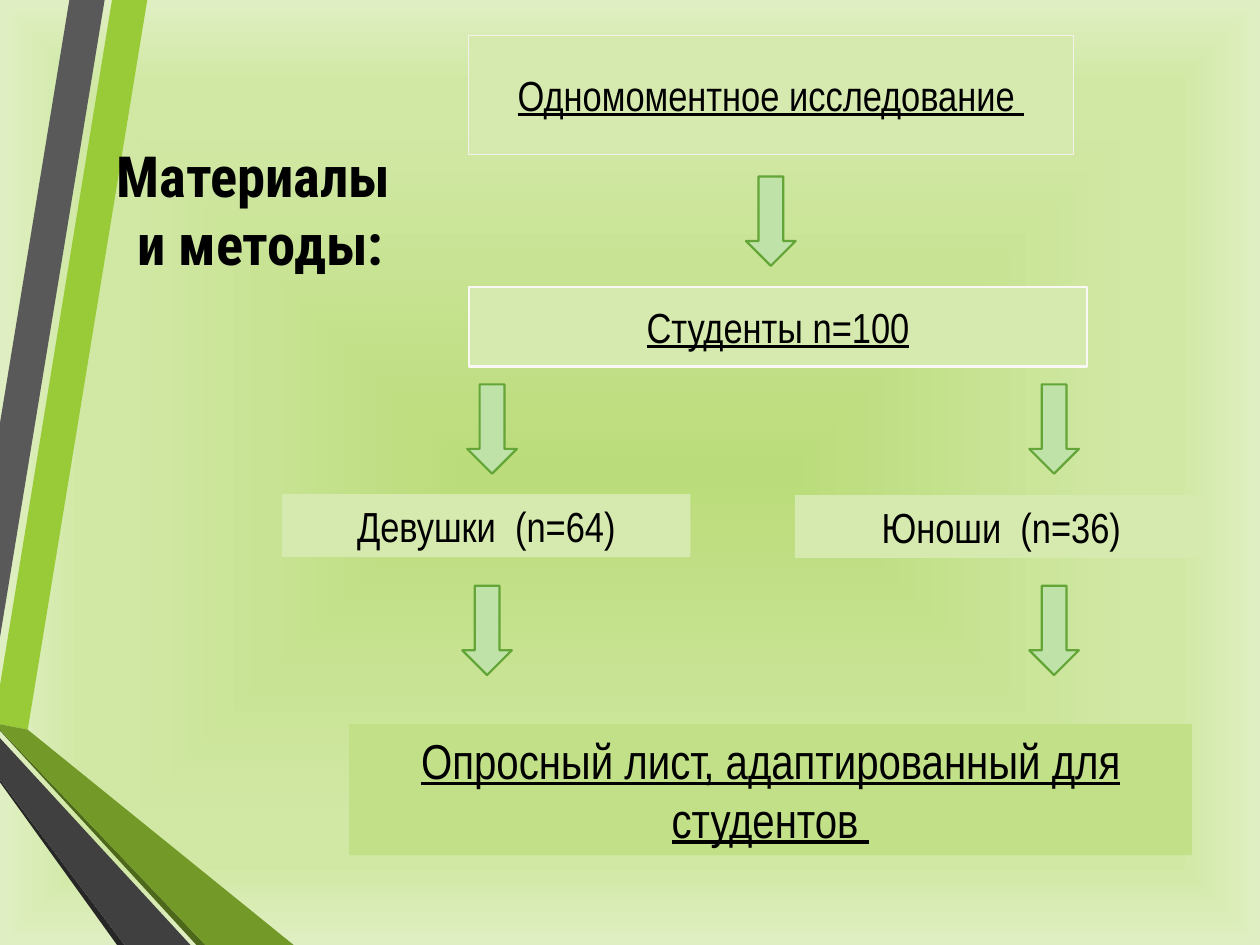
"""Build the "Materials and methods" study-design slide."""
from pptx import Presentation
from pptx.dml.color import RGBColor
from pptx.enum.shapes import MSO_SHAPE
from pptx.enum.text import MSO_ANCHOR, PP_ALIGN
from pptx.oxml import parse_xml
from pptx.oxml.ns import nsdecls
from pptx.util import Cm, Pt

BLACK = RGBColor(0x00, 0x00, 0x00)
PALE_GREEN = RGBColor(0xD6, 0xEA, 0xAF)
MID_GREEN = RGBColor(0xC2, 0xE0, 0x88)
ARROW_FILL = RGBColor(0xBF, 0xE2, 0xA8)
ARROW_LINE = RGBColor(0x63, 0xA5, 0x37)
CREAM = RGBColor(0xF3, 0xF1, 0xE9)
OFF_WHITE = RGBColor(0xF9, 0xF8, 0xF4)
LIME = RGBColor(0x99, 0xCB, 0x38)
GREY = RGBColor(0x59, 0x59, 0x59)
NEAR_BLACK = RGBColor(0x26, 0x26, 0x26)
DARK_OLIVE = RGBColor(0x4D, 0x67, 0x1B)
OLIVE = RGBColor(0x73, 0x9A, 0x28)
CHARCOAL = RGBColor(0x40, 0x40, 0x40)
GLOW = [
    (0, RGBColor(0xBB, 0xDC, 0x7A)),
    (74, RGBColor(0xD1, 0xE8, 0xA5)),
    (83, RGBColor(0xD1, 0xE8, 0xA5)),
    (100, RGBColor(0xE0, 0xEF, 0xC3)),
]

WIDTH, HEIGHT = 25.4, 19.05
RIBBONS = [
    (LIME, [(0, 13.82), (0, 14.6), (0.56, 14.71), (2.97, 0), (2.26, 0)]),
    (GREY, [(2.11, 0), (1.4, 0), (0, 8.53), (0, 12.85)]),
    (NEAR_BLACK, [(0, 15.72), (0, 15.77), (2.36, HEIGHT), (2.51, HEIGHT)]),
    (DARK_OLIVE, [(0, 14.71), (0, 14.73), (3.96, HEIGHT), (4.14, HEIGHT)]),
    (OLIVE, [(0, 14.71), (4.14, HEIGHT), (5.92, HEIGHT), (0.56, 14.71), (0, 14.6)]),
    (CHARCOAL, [(0, 15.72), (2.51, HEIGHT), (3.84, HEIGHT), (0, 14.88)]),
]
ARROWS = [(15.04, 3.56), (9.42, 7.75), (20.75, 7.75), (20.75, 11.81), (9.32, 11.81)]


class FlowSlide:
    """Holds the fonts and the current slide, and draws its elements."""

    title_font = "Roboto Condensed"
    body_font = "Arial Narrow"

    def __init__(self, s):
        self.s = s

    def background(self, stops):
        self.s.background.fill.gradient()
        grad = self.s.element.xpath(".//a:gradFill")[0]
        gs = "".join(
            f'<a:gs pos="{pos * 1000}"><a:srgbClr val="{color}"/></a:gs>'
            for pos, color in stops
        )
        centred = parse_xml(
            f'<a:gradFill {nsdecls("a")} rotWithShape="1"><a:gsLst>{gs}</a:gsLst>'
            '<a:path path="shape"><a:fillToRect l="50000" t="50000" r="50000" b="50000"/>'
            "</a:path></a:gradFill>"
        )
        grad.getparent().replace(grad, centred)

    def paint(self, sp, fill, line=None, weight=1.25):
        sp.shadow.inherit = False
        sp.fill.solid()
        sp.fill.fore_color.rgb = fill
        if line is None:
            sp.line.fill.background()
        else:
            sp.line.color.rgb = line
            sp.line.width = Pt(weight)

    def label(self, sp, text, font, size, bold=False, underline=False):
        tf = sp.text_frame
        tf.word_wrap = True
        tf.vertical_anchor = MSO_ANCHOR.MIDDLE
        p = tf.paragraphs[0]
        p.text = text
        p.alignment = PP_ALIGN.CENTER
        p.font.name = font
        p.font.size = Pt(size)
        p.font.bold = bold
        p.font.underline = underline
        p.font.color.rgb = BLACK

    def ribbon(self, color, points):
        start, *rest = [(Cm(x), Cm(y)) for x, y in points]
        builder = self.s.shapes.build_freeform(*start)
        builder.add_line_segments(rest, close=True)
        self.paint(builder.convert_to_shape(), color)

    def title(self, text, *box):
        sp = self.s.shapes.add_textbox(*map(Cm, box))
        self.label(sp, text, self.title_font, 32.4, bold=True)

    def box(self, text, *box, fill=PALE_GREEN, line=None, weight=1.25, size=24, underline=True):
        sp = self.s.shapes.add_shape(MSO_SHAPE.RECTANGLE, *map(Cm, box))
        self.paint(sp, fill, line, weight)
        self.label(sp, text, self.body_font, size, underline=underline)

    def arrow(self, left, top):
        sp = self.s.shapes.add_shape(MSO_SHAPE.DOWN_ARROW, Cm(left), Cm(top), Cm(1), Cm(1.8))
        self.paint(sp, ARROW_FILL, ARROW_LINE)


def main():
    prs = Presentation()
    prs.slide_width, prs.slide_height = Cm(WIDTH), Cm(HEIGHT)
    flow = FlowSlide(prs.slides.add_slide(prs.slide_layouts[6]))

    flow.background(GLOW)
    for color, points in RIBBONS:
        flow.ribbon(color, points)

    flow.title("Материалы \nи методы:", 1.04, 2.62, 8.41, 3.18)
    flow.box("Одномоментное исследование ", 9.45, 0.71, 12.19, 2.41, line=CREAM, weight=0.75)
    flow.box("Студенты n=100", 9.45, 5.79, 12.47, 1.6, line=OFF_WHITE)
    flow.box("Девушки  (n=64)", 5.69, 9.96, 8.23, 1.27, underline=False)
    flow.box("Юноши  (n=36)", 16.03, 9.98, 8.31, 1.27, underline=False)
    flow.box("Опросный лист, адаптированный для студентов ", 7.04, 14.6, 16.99, 2.64,
             fill=MID_GREEN, size=28)
    for left, top in ARROWS:
        flow.arrow(left, top)

    prs.save("out.pptx")


if __name__ == "__main__":
    main()
